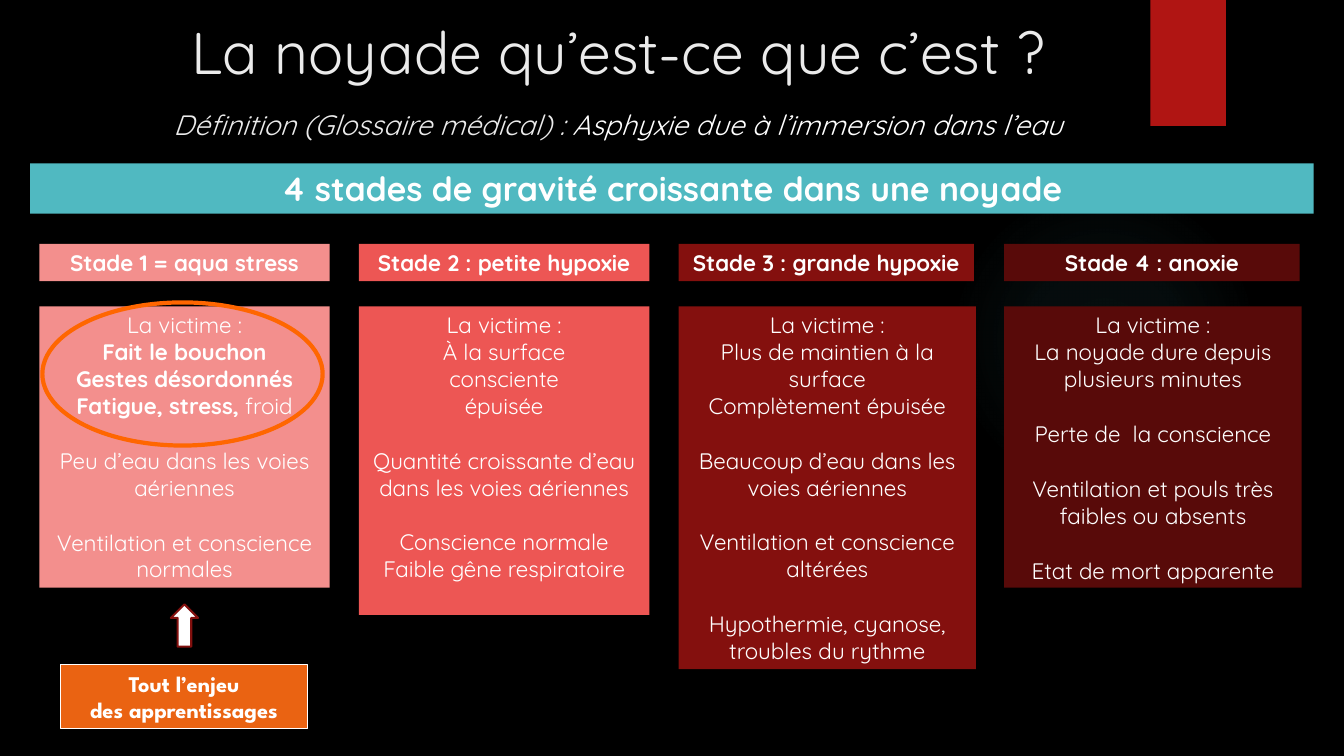
from pptx import Presentation
from pptx.dml.color import RGBColor
from pptx.enum.shapes import MSO_SHAPE
from pptx.enum.text import MSO_ANCHOR, PP_ALIGN
from pptx.oxml import parse_xml
from pptx.util import Inches, Pt

RECT, OVAL, ARROW = MSO_SHAPE.RECTANGLE, MSO_SHAPE.OVAL, MSO_SHAPE.RIGHT_ARROW
CENTER, TOP, MIDDLE = PP_ALIGN.CENTER, MSO_ANCHOR.TOP, MSO_ANCHOR.MIDDLE

TITLE = "La noyade qu’est-ce que c’est ?"
DEFINITION = ("Définition (Glossaire médical) : ", "Asphyxie due à l’immersion dans l’eau")
BANNER = "4 stades de gravité croissante dans une noyade"
CALLOUT = ["Tout l’enjeu", "des apprentissages"]

# Each body is a list of groups of lines; a (bold, plain) pair is a mixed line.
STAGES = [
    dict(head="Stade 1 = aqua stress", color="F38F8D", x=0.39, head_w=2.88, body_w=2.88, body_h=2.79,
         body=[["La victime :", ("Fait le bouchon", ""), ("Gestes désordonnés", ""),
                ("Fatigue, stress,", " froid")],
               ["Peu d’eau dans les voies aériennes"],
               ["Ventilation et conscience normales"]]),
    dict(head="Stade 2 : petite hypoxie", color="ED5654", x=3.56, head_w=2.88, body_w=2.88, body_h=3.06,
         body=[["La victime :", "À la surface", "consciente", "épuisée"],
               ["Quantité croissante d’eau dans les voies aériennes"],
               ["Conscience normale", "Faible gêne respiratoire"]]),
    dict(head="Stade 3 : grande hypoxie", color="84100E", x=6.73, head_w=2.93, body_w=2.95, body_h=3.6,
         body=[["La victime :", "Plus de maintien à la surface", "Complètement épuisée"],
               ["Beaucoup d’eau dans les voies aériennes"],
               ["Ventilation et conscience altérées"],
               ["Hypothermie, cyanose, troubles du rythme"]]),
    dict(head="Stade 4 : anoxie", color="580A09", x=9.96, head_w=2.93, body_w=2.95, body_h=2.79,
         body=[["La victime :", "La noyade dure depuis plusieurs minutes"],
               ["Perte de  la conscience"],
               ["Ventilation et pouls très faibles ou absents"],
               ["Etat de mort apparente"]]),
]

THEME = dict(
    font="Quicksand", callout_font="League Spartan",
    title_size=42, sub_size=20, banner_size=24, text_size=16, group_gap=20,
    back="000000", white="FFFFFF", title="EBEBEB", teal="50B9C1", ribbon="B01513",
    orange="EA6312", ring="FF6600", arrow_line="82100E",
)
GLOW_STOPS = [(0, 7), (36, 6), (69, 0)]  # position and opacity in percent
HEAD_Y, HEAD_H, BODY_Y = 2.42, 0.37, 3.04


def rgb(value):
    return RGBColor.from_string(value)


def add_shape(slide, kind, box, fill=None, line=None, width=1):
    sp = slide.shapes.add_shape(kind, *map(Inches, box))
    sp.shadow.inherit = False
    if fill:
        sp.fill.solid()
        sp.fill.fore_color.rgb = rgb(fill)
    else:
        sp.fill.background()
    if line:
        sp.line.color.rgb = rgb(line)
        sp.line.width = Pt(width)
    else:
        sp.line.fill.background()
    return sp


def style(p, size, font=THEME["font"], color=THEME["white"], bold=None):
    p.alignment = CENTER
    p.font.size, p.font.name, p.font.bold = Pt(size), font, bold
    p.font.color.rgb = rgb(color)


def write_lines(sp, lines, size=THEME["text_size"], font=THEME["font"]):
    """Fill a shape with bold centred lines."""
    tf = sp.text_frame
    tf.word_wrap, tf.vertical_anchor = True, MIDDLE
    tf.text = "\n".join(lines)
    for p in tf.paragraphs:
        style(p, size, font, bold=True)


def write_body(sp, groups):
    tf = sp.text_frame
    tf.word_wrap, tf.vertical_anchor = True, TOP
    p = tf.paragraphs[0]
    for g, group in enumerate(groups):
        for n, line in enumerate(group):
            if g or n:
                p = tf.add_paragraph()
            if g and n == 0:
                p.space_before = Pt(THEME["group_gap"])
            style(p, THEME["text_size"])
            bold, plain = line if isinstance(line, tuple) else ("", line)
            if bold:
                r = p.add_run()
                r.text, r.font.bold = bold, True
            if plain:
                p.add_run().text = plain


def add_glow(slide):
    sp = add_shape(slide, OVAL, (9.41, 1.83, 3.08, 3.08))
    stops = "".join(
        f'<a:gs pos="{pos * 1000}"><a:srgbClr val="{THEME["teal"]}">'
        f'<a:alpha val="{alpha * 1000}"/></a:srgbClr></a:gs>' for pos, alpha in GLOW_STOPS)
    grad = parse_xml(
        '<a:gradFill xmlns:a="http://schemas.openxmlformats.org/drawingml/2006/main">'
        f'<a:gsLst>{stops}</a:gsLst><a:path path="circle">'
        '<a:fillToRect l="50000" t="50000" r="50000" b="50000"/></a:path></a:gradFill>')
    sp_pr = sp.fill._xPr
    sp_pr.replace(sp_pr.eg_fillProperties, grad)


def add_title(slide):
    tf = slide.shapes.add_textbox(*map(Inches, (0.75, 0.11, 10.76, 1.45))).text_frame
    tf.word_wrap = True
    p = tf.paragraphs[0]
    p.text = TITLE
    style(p, THEME["title_size"], color=THEME["title"])
    p = tf.add_paragraph()
    p.space_before = Pt(15)
    style(p, THEME["sub_size"])
    p.font.italic = True
    for text, color in zip(DEFINITION, (THEME["title"], THEME["white"])):
        r = p.add_run()
        r.text = text
        r.font.color.rgb = rgb(color)


def main():
    prs = Presentation()
    prs.slide_width, prs.slide_height = Inches(13.33), Inches(7.5)
    slide = prs.slides.add_slide(prs.slide_layouts[6])
    slide.background.fill.solid()
    slide.background.fill.fore_color.rgb = rgb(THEME["back"])

    add_glow(slide)
    add_shape(slide, RECT, (11.41, 0, 0.75, 1.25), THEME["ribbon"])
    add_title(slide)
    banner = add_shape(slide, RECT, (0.3, 1.62, 12.73, 0.5), THEME["teal"])
    write_lines(banner, [BANNER], THEME["banner_size"])

    for st in STAGES:
        head = add_shape(slide, RECT, (st["x"], HEAD_Y, st["head_w"], HEAD_H), st["color"])
        write_lines(head, [st["head"]])
        body = add_shape(slide, RECT, (st["x"], BODY_Y, st["body_w"], st["body_h"]), st["color"])
        write_body(body, st["body"])

    arrow = add_shape(slide, ARROW, (1.62, 6.07, 0.42, 0.27), THEME["white"], THEME["arrow_line"], 1.5)
    arrow.rotation = 270
    callout = add_shape(slide, RECT, (0.6, 6.59, 2.45, 0.64), THEME["orange"], THEME["white"], 0.75)
    write_lines(callout, CALLOUT, font=THEME["callout_font"])
    add_shape(slide, OVAL, (0.42, 3, 2.78, 1.42), line=THEME["ring"], width=3)

    prs.save("out.pptx")


if __name__ == "__main__":
    main()
